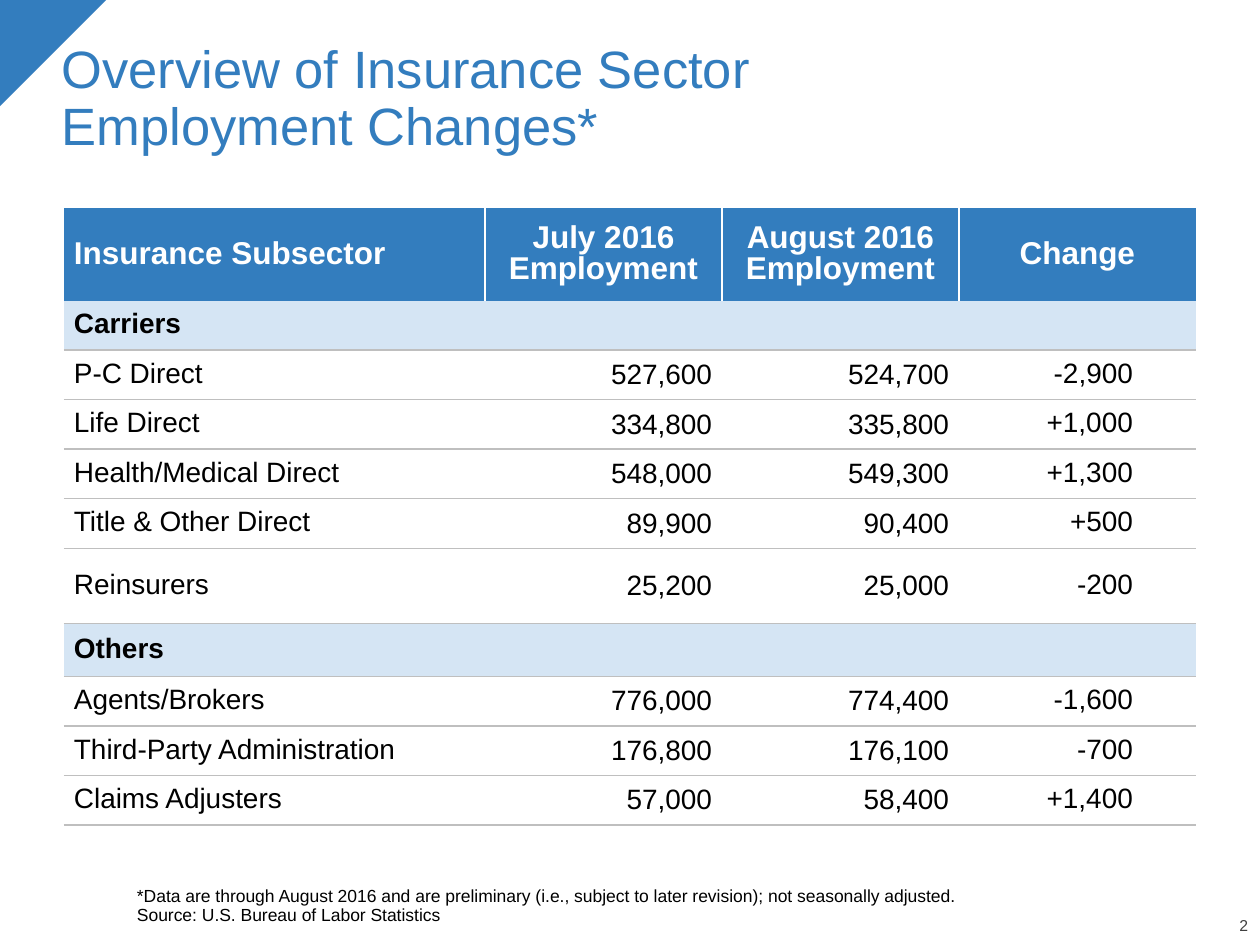
"""Build the slide on employment changes across insurance subsectors."""
import pptx
import pptx.dml.color
import pptx.enum.shapes
import pptx.enum.text
import pptx.oxml
import pptx.oxml.ns
import pptx.util

PX = 914400 / 126
COLORS = {
    "blue": "337DBE", "pale": "D5E5F4", "rule": "BFBFBF",
    "white": "FFFFFF", "black": "000000", "grey": "404040",
}
ALIGN = pptx.enum.text.PP_ALIGN
ANCHOR = pptx.enum.text.MSO_ANCHOR


def px(*lengths):
    return [round(length * PX) for length in lengths]


def write(frame, text, size, color, align=ALIGN.LEFT, spacing=0.9, bold=False):
    frame.text = text
    for paragraph in frame.paragraphs:
        for name, value in {"alignment": align, "line_spacing": spacing}.items():
            setattr(paragraph, name, value)
        for run in paragraph.runs:
            font_format = {"name": "Arial", "size": pptx.util.Pt(size), "bold": bold}
            for name, value in font_format.items():
                setattr(run.font, name, value)
            run.font.color.rgb = pptx.dml.color.RGBColor.from_string(COLORS[color])


deck = pptx.Presentation()
deck.slide_width, deck.slide_height = px(1260, 945)
slide = deck.slides.add_slide(deck.slide_layouts[5])

corner = slide.shapes.add_shape(
    pptx.enum.shapes.MSO_SHAPE.RIGHT_TRIANGLE, *px(0, 0, 106, 106))
corner.rotation = 90
corner.shadow.inherit = False
corner.fill.solid()
corner.fill.fore_color.rgb = pptx.dml.color.RGBColor.from_string(COLORS["blue"])
corner.line.fill.background()

title = slide.shapes.title
title.left, title.top, title.width, title.height = px(49, 32, 1166, 131)
title.text_frame.auto_size = pptx.enum.text.MSO_AUTO_SIZE.NONE
title.text_frame.vertical_anchor = ANCHOR.BOTTOM
write(title.text_frame, "Overview of Insurance Sector\vEmployment Changes*", 30, "blue")

NOTES = [
    ((137, 868, 1058, 57), 10, "black", ALIGN.LEFT,
     "*Data are through August 2016 and are preliminary (i.e., subject to later "
     "revision); not seasonally adjusted.\vSource: U.S. Bureau of Labor Statistics"),
    ((1188, 919, 60, 16), 9, "grey", ALIGN.RIGHT, "2"),
]
note_format = {
    "word_wrap": True, "vertical_anchor": ANCHOR.BOTTOM,
    "margin_left": 0, "margin_right": 0, "margin_top": 0, "margin_bottom": 0,
}
for place, size, color, align, text in NOTES:
    note = slide.shapes.add_textbox(*px(*place)).text_frame
    for name, value in note_format.items():
        setattr(note, name, value)
    write(note, text, size, color, align)

ROWS = [
    ("Insurance Subsector", "July 2016\nEmployment", "August 2016\nEmployment", "Change"),
    ("Carriers", "", "", ""),
    ("P-C Direct", "527,600", "524,700", "-2,900"),
    ("Life Direct", "334,800", "335,800", "+1,000"),
    ("Health/Medical Direct", "548,000", "549,300", "+1,300"),
    ("Title & Other Direct", "89,900", "90,400", "+500"),
    ("Reinsurers", "25,200", "25,000", "-200"),
    ("Others", "", "", ""),
    ("Agents/Brokers", "776,000", "774,400", "-1,600"),
    ("Third-Party Administration", "176,800", "176,100", "-700"),
    ("Claims Adjusters", "57,000", "58,400", "+1,400"),
]
WIDTHS = [421, 237, 237, 237]
HEIGHTS = [93, 49, 49, 49, 49, 48, 75, 53, 49, 49, 48]

table = slide.shapes.add_table(
    len(ROWS), len(WIDTHS), *px(64, 208, sum(WIDTHS), sum(HEIGHTS))).table
table.first_row = table.horz_banding = False
for column, width in zip(table.columns, px(*WIDTHS)):
    column.width = width
for row, height in zip(table.rows, px(*HEIGHTS)):
    row.height = height

for r, entries in enumerate(ROWS):
    header = r == 0
    section = not entries[1]
    for c, text in enumerate(entries):
        cell = table.cell(r, c)
        side = 63 if c == 3 and not header else 10
        pad = 8 if text else 0
        left, right, top, bottom = px(10, side, pad, pad)
        cell_format = {
            "margin_left": left, "margin_right": right,
            "margin_top": top, "margin_bottom": bottom,
            "vertical_anchor": ANCHOR.MIDDLE,
        }
        for name, value in cell_format.items():
            setattr(cell, name, value)

        if c == 0:
            align = ALIGN.LEFT
        else:
            align = ALIGN.CENTER if header else ALIGN.RIGHT
        write(cell.text_frame, text, 18 if header else 16,
              "white" if header else "black", align,
              0.9 if header or c in (0, 3) else 1.0, header or section)

        borders = {
            "L": ("white", 1.5) if header and c > 0 else None,
            "R": ("white", 1.5) if header and c < 3 else None,
            "T": ("rule", 1) if r > 1 else None,
            "B": ("rule", 1) if r > 0 else None,
        }
        properties = cell._tc.get_or_add_tcPr()
        for edge, border in borders.items():
            color, points = border or ("white", 0)
            paint = (f'<a:solidFill><a:srgbClr val="{COLORS[color]}"/></a:solidFill>'
                     if border else "<a:noFill/>")
            properties.append(pptx.oxml.parse_xml(
                f'<a:ln{edge} {pptx.oxml.ns.nsdecls("a")} '
                f'w="{pptx.util.Pt(points)}">{paint}</a:ln{edge}>'))

        if header or section:
            cell.fill.solid()
            cell.fill.fore_color.rgb = pptx.dml.color.RGBColor.from_string(
                COLORS["blue" if header else "pale"])
        else:
            cell.fill.background()

deck.save("out.pptx")
